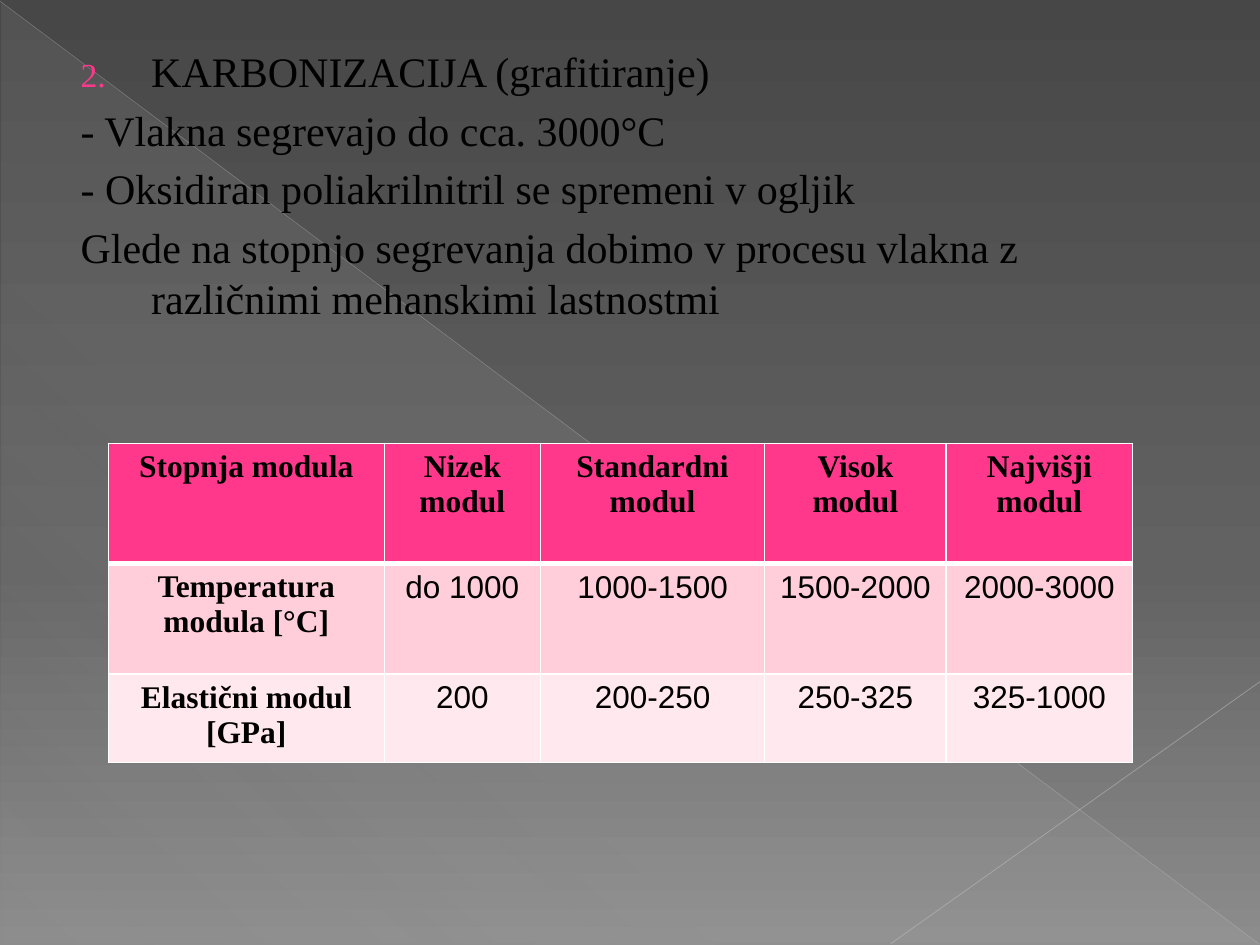
from lxml import etree
from pptx import Presentation
from pptx.dml.color import RGBColor
from pptx.enum.shapes import MSO_CONNECTOR, MSO_SHAPE
from pptx.enum.text import MSO_AUTO_SIZE, PP_ALIGN
from pptx.oxml.ns import qn
from pptx.util import Inches, Pt

STRAIGHT = MSO_CONNECTOR.STRAIGHT
TRIANGLE = MSO_SHAPE.RIGHT_TRIANGLE
CENTER = PP_ALIGN.CENTER
NO_AUTOFIT = MSO_AUTO_SIZE.NONE
SERIF, SANS = "Times New Roman", "Arial"
PINK, WHITE, BLACK = "FF388C", "FFFFFF", "000000"

BODY = [
    "KARBONIZACIJA (grafitiranje)",
    "- Vlakna segrevajo do cca. 3000°C",
    "- Oksidiran poliakrilnitril se spremeni v ogljik",
    "Glede na stopnjo segrevanja dobimo v procesu vlakna z različnimi mehanskimi lastnostmi",
]
ROWS = [
    ["Stopnja modula", "Nizek modul", "Standardni modul", "Visok modul", "Najvišji modul"],
    ["Temperatura modula [°C]", "do 1000", "1000-1500", "1500-2000", "2000-3000"],
    ["Elastični modul [GPa]", "200", "200-250", "250-325", "325-1000"],
]
ROW_FILLS = [PINK, "FFCEDA", "FFE8EE"]
COL_WIDTHS = [2.19, 1.24, 1.78, 1.44, 1.48]
ROW_HEIGHTS = [0.95, 0.88, 0.7]


def rgb(color):
    return RGBColor.from_string(color)


def add(parent, tag, **attrs):
    return etree.SubElement(parent, qn(tag), {k: str(v) for k, v in attrs.items()})


def add_color(parent, color, opacity=100):
    clr = add(parent, "a:srgbClr", val=color)
    if opacity < 100:
        add(clr, "a:alpha", val=opacity * 1000)


def set_gradient(fill, holder, stops, angle):
    fill.solid()
    solid = holder.find(qn("a:solidFill"))
    grad = etree.Element(qn("a:gradFill"), rotWithShape="1")
    gs_list = add(grad, "a:gsLst")
    for pos, color, opacity in stops:
        add_color(add(gs_list, "a:gs", pos=pos * 1000), color, opacity)
    add(grad, "a:lin", ang=angle * 60000, scaled=0)
    holder.replace(solid, grad)


def write(p, text, size=18, font=SERIF, color=BLACK, bold=False, align=None):
    p.alignment = align
    r = p.add_run()
    r.text = text
    r.font.size, r.font.name, r.font.bold = Pt(size), font, bold
    r.font.color.rgb = rgb(color)


def add_thin_line(s, start, end, color, width, opacity):
    line = s.shapes.add_connector(STRAIGHT, *map(Inches, start + end))
    line.line.color.rgb = rgb(color)
    line.line.width = Pt(width)
    sp_pr = line._element.spPr
    add(next(sp_pr.iter(qn("a:srgbClr"))), "a:alpha", val=opacity * 1000)
    add(sp_pr, "a:effectLst")


def add_backdrop(s):
    fill = s.background.fill
    fill.solid()
    bg_pr = next(s._element.iter(qn("p:bgPr")))
    set_gradient(fill, bg_pr, [(0, "474747", 100), (60, "626262", 100), (100, "8C8C8C", 100)], 90)
    sp = s.shapes.add_shape(TRIANGLE, *map(Inches, (0.01, 0.02, 9.99, 7.48)))
    sp.shadow.inherit = False
    sp.line.fill.background()
    set_gradient(sp.fill, sp._element.spPr,
                 [(0, "D2D2D2", 10), (70, "D2D2D2", 8), (100, "D2D2D2", 1)], 133)
    add_thin_line(s, (0, 0.01), (9.99, 7.49), "BFBFBF", 0.39, 35)
    add_thin_line(s, (10, 5.41), (7.07, 7.49), "C6C6C6", 0.47, 45)


def fill_body(sp, box):
    sp.left, sp.top, sp.width, sp.height = map(Inches, box)
    tf = sp.text_frame
    tf.word_wrap = True
    tf.auto_size = NO_AUTOFIT
    for i, text in enumerate(BODY):
        p = tf.paragraphs[0] if i == 0 else tf.add_paragraph()
        write(p, text, size=24)
        p_pr = p._p.get_or_add_pPr()
        p_pr.set("marL", str(Inches(0.63)))
        p_pr.set("indent", str(Inches(-0.56)))
        add(add(p_pr, "a:spcBef"), "a:spcPct", val=20000)
        if i == 0:
            add_color(add(p_pr, "a:buClr"), PINK)
            add(p_pr, "a:buSzPct", val=80000)
            add(p_pr, "a:buFont", typeface=SERIF)
            add(p_pr, "a:buAutoNum", type="arabicPeriod", startAt=2)
        else:
            add(p_pr, "a:buNone")


def set_borders(cell, widths):
    tc_pr = cell._tc.get_or_add_tcPr()
    for i, (side, width) in enumerate(widths.items()):
        ln = etree.Element(qn("a:ln" + side), w=str(Pt(width)))
        add_color(add(ln, "a:solidFill"), WHITE)
        tc_pr.insert(i, ln)


def add_modulus_table(s, box):
    table = s.shapes.add_table(len(ROWS), len(ROWS[0]), *map(Inches, box)).table
    for col, width in zip(table.columns, COL_WIDTHS):
        col.width = Inches(width)
    for i, (row, height) in enumerate(zip(table.rows, ROW_HEIGHTS)):
        row.height = Inches(height)
        for j, text in enumerate(ROWS[i]):
            cell = table.cell(i, j)
            cell.fill.solid()
            cell.fill.fore_color.rgb = rgb(ROW_FILLS[i])
            label = i == 0 or j == 0
            write(cell.text_frame.paragraphs[0], text, font=SERIF if label else SANS,
                  bold=label, align=CENTER)
            set_borders(cell, {"L": 1, "R": 1, "T": 3 if i == 1 else 1, "B": 3 if i == 0 else 1})


def main():
    prs = Presentation()
    prs.slide_width, prs.slide_height = Inches(10), Inches(7.5)
    s = prs.slides.add_slide(prs.slide_layouts[1])
    title, body = s.placeholders
    s.shapes._spTree.remove(title._element)
    add_backdrop(s)
    s.shapes._spTree.append(body._element)
    fill_body(body, (0.47, 0.31, 9, 6.95))
    add_modulus_table(s, (0.86, 3.52, 8.13, 2.53))
    prs.save("out.pptx")


if __name__ == "__main__":
    main()
